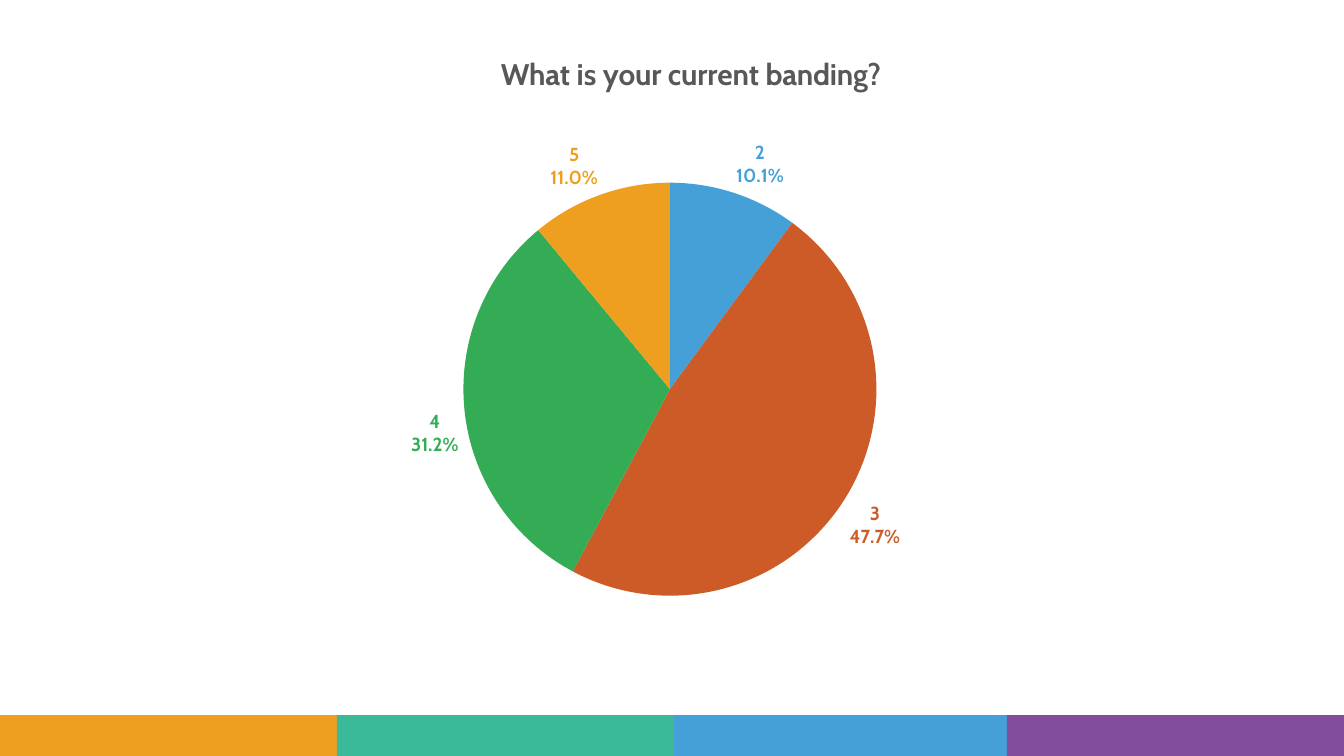
from lxml import etree
from pptx import Presentation
from pptx.chart.data import CategoryChartData
from pptx.dml.color import RGBColor
from pptx.enum.chart import XL_CHART_TYPE, XL_LABEL_POSITION
from pptx.enum.shapes import MSO_SHAPE
from pptx.oxml.ns import qn
from pptx.util import Pt

PIE = XL_CHART_TYPE.PIE
OUTSIDE_END = XL_LABEL_POSITION.OUTSIDE_END
RECTANGLE = MSO_SHAPE.RECTANGLE

ORANGE = RGBColor(0xEE, 0x9F, 0x20)
TEAL = RGBColor(0x3A, 0xBA, 0x99)
BLUE = RGBColor(0x46, 0xA0, 0xD8)
PURPLE = RGBColor(0x82, 0x4D, 0x9D)
RUST = RGBColor(0xCC, 0x5B, 0x27)
GREEN = RGBColor(0x33, 0xAC, 0x55)
GREY = RGBColor(0x58, 0x58, 0x58)

FONT = "Cabin"
QUESTION = "What is your current banding?"
ANSWERS = [
    ("2", 0.101, BLUE),
    ("3", 0.477, RUST),
    ("4", 0.312, GREEN),
    ("5", 0.11, ORANGE),
]
FOOTER_COLORS = [ORANGE, TEAL, BLUE, PURPLE]

SLIDE_W, SLIDE_H = 1344, 756
FOOTER_H, BAND_W = 41, 337
CHART_BOX = (287, 29, 802, 631)
PLOT_LAYOUT = {"x": 0.22, "y": 0.205, "w": 0.515, "h": 0.732}
TITLE_LAYOUT = {"x": 0.26, "y": 0.03}


def px(length):
    return round(length * 12192000 / SLIDE_W)


def style_font(font, size, color):
    font.name = FONT
    font.size = Pt(size)
    font.bold = True
    font.color.rgb = color


def set_layout(parent, position, fractions, inner=False):
    """Place a chart part by fractions of the chart area."""
    for old in parent.findall(qn("c:layout")):
        parent.remove(old)
    layout = etree.Element(qn("c:layout"))
    manual = etree.SubElement(layout, qn("c:manualLayout"))
    settings = [("layoutTarget", "inner")] if inner else []
    settings += [("xMode", "edge"), ("yMode", "edge"), *fractions.items()]
    for tag, value in settings:
        etree.SubElement(manual, qn(f"c:{tag}")).set("val", str(value))
    parent.insert(position, layout)


def add_footer(slide):
    for index, color in enumerate(FOOTER_COLORS):
        left = min(index * BAND_W, SLIDE_W - BAND_W)
        band = slide.shapes.add_shape(
            RECTANGLE, px(left), px(SLIDE_H - FOOTER_H), px(BAND_W), px(FOOTER_H))
        band.shadow.inherit = False
        band.fill.solid()
        band.fill.fore_color.rgb = color
        band.line.fill.background()


def add_banding_chart(slide):
    data = CategoryChartData(number_format="0.0%")
    data.categories = [answer for answer, _, _ in ANSWERS]
    data.add_series("Series 1", [share for _, share, _ in ANSWERS])
    chart = slide.shapes.add_chart(PIE, *map(px, CHART_BOX), data).chart
    chart.has_legend = False
    chart.font.name = FONT
    chart.font.size = Pt(10)

    title_text = chart.chart_title.text_frame
    title_text.text = QUESTION
    style_font(title_text.paragraphs[0].font, 21.3, GREY)
    chart_xml = chart.element.find(qn("c:chart"))
    set_layout(chart_xml.find(qn("c:title")), 1, TITLE_LAYOUT)
    set_layout(chart_xml.find(qn("c:plotArea")), 0, PLOT_LAYOUT, inner=True)

    plot = chart.plots[0]
    plot.vary_by_categories = True
    series = plot.series[0]
    labels = series.data_labels
    labels.show_value = True
    labels.show_category_name = True
    labels.number_format = "0.0%"
    labels.number_format_is_linked = False
    labels.position = OUTSIDE_END

    for index, (_, _, color) in enumerate(ANSWERS):
        point = series.points[index]
        point.format.fill.solid()
        point.format.fill.fore_color.rgb = color
        point.format.line.fill.background()
        label = point.data_label
        style_font(label.font, 13.5, color)
        label.position = OUTSIDE_END

    for label_xml in chart_xml.iter(qn("c:dLbl")):
        label_xml.find(qn("c:showCatName")).set("val", "1")
        etree.SubElement(label_xml, qn("c:separator")).text = "\n"


def main():
    deck = Presentation()
    deck.slide_width, deck.slide_height = px(SLIDE_W), px(SLIDE_H)
    slide = deck.slides.add_slide(deck.slide_layouts[6])
    add_footer(slide)
    add_banding_chart(slide)
    deck.save("out.pptx")


if __name__ == "__main__":
    main()
